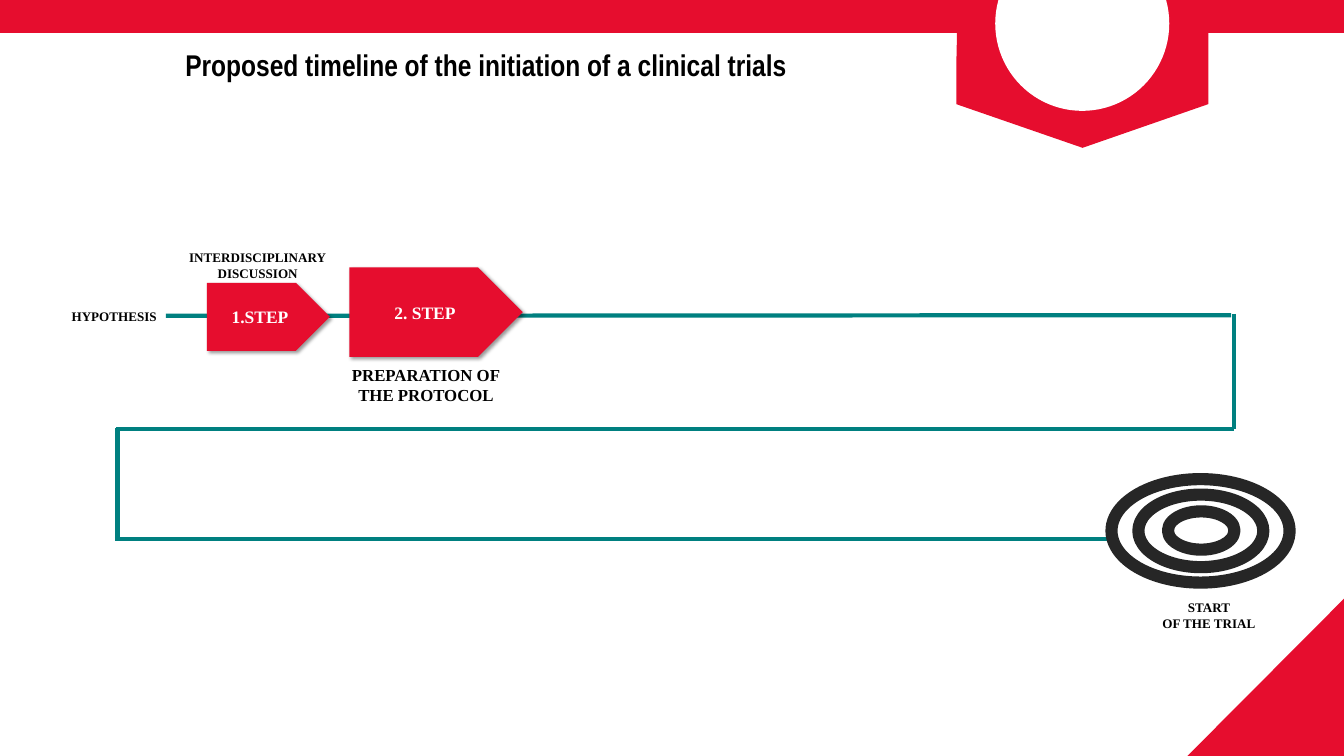
from lxml.etree import SubElement
from pptx import Presentation
from pptx.dml.color import RGBColor
from pptx.enum.shapes import MSO_CONNECTOR, MSO_SHAPE
from pptx.enum.text import MSO_ANCHOR, MSO_AUTO_SIZE, PP_ALIGN
from pptx.oxml.ns import qn
from pptx.util import Emu, Pt

SCALE = 9144
RED = "E60D2E"
TEAL = "008080"
CHARCOAL = "262626"
WHITE = "FFFFFF"
BLACK = "000000"
SERIF = "Times New Roman"

TIMELINE = [
    (1832, 469, 247, 470),
    (171, 802, 1840, 802),
    (173, 638, 1836, 638),
    (1836, 467, 1836, 639),
    (175, 637, 175, 804),
]
STEPS = [
    ("1.STEP", (308, 421, 183, 101)),
    ("2. STEP", (520, 398, 258, 133)),
]
LABELS = [
    (["HYPOTHESIS"], (85, 454, 170, 34), 14),
    (["INTERDISCIPLINARY", "DISCUSSION"], (265, 367, 237, 57), 14),
    (["PREPARATION OF", "THE PROTOCOL"], (489, 538, 290, 71), 18),
    (["START", "OF THE TRIAL"], (1654, 887, 290, 57), 14),
]
TARGET_RINGS = [
    (1654, 713, 265, 154),
    (1694, 736, 186, 108),
    (1738, 761, 99, 57),
]
CORNER = [(2000, 891), (2000, 1125), (1767, 1125)]
BADGE = [(1798, 0), (1798, 155), (1611, 220), (1423, 155),
         (1423, 101), (1424, 56), (1423, 0)]


def px(*lengths):
    return [Emu(length * SCALE) for length in lengths]


def rgb(value):
    return RGBColor.from_string(value)


def write(frame, lines, size, color, font=SERIF):
    frame.word_wrap = True
    frame.text = "\n".join(lines)
    style = {"name": font, "size": Pt(size), "bold": True}
    for paragraph in frame.paragraphs:
        paragraph.alignment = PP_ALIGN.CENTER
        for key, value in style.items():
            setattr(paragraph.font, key, value)
        paragraph.font.color.rgb = rgb(color)


def paint(shape, fill, line=None, width=0):
    shape.shadow.inherit = False
    shape.fill.solid()
    shape.fill.fore_color.rgb = rgb(fill)
    if line:
        shape.line.color.rgb = rgb(line)
        shape.line.width = Pt(width)
    else:
        shape.line.fill.background()


def add_preset(slide, preset, box, fill, line=None, width=0):
    shape = slide.shapes.add_shape(preset, *px(*box))
    paint(shape, fill, line, width)
    return shape


def add_outline(slide, points, fill):
    builder = slide.shapes.build_freeform(*points[0], scale=SCALE)
    builder.add_line_segments(points[1:], close=True)
    paint(builder.convert_to_shape(), fill)


def add_timeline_segment(slide, ends):
    segment = slide.shapes.add_connector(MSO_CONNECTOR.STRAIGHT, *px(*ends))
    segment.line.color.rgb = rgb(TEAL)
    segment.line.width = Pt(4.5)
    SubElement(segment._element.spPr, qn("a:effectLst"))


def add_step(slide, caption, box):
    step = add_preset(slide, MSO_SHAPE.PENTAGON, box, RED)
    write(step.text_frame, [caption], 18.7, WHITE)
    step.text_frame.vertical_anchor = MSO_ANCHOR.MIDDLE
    effects = step._element.spPr.find(qn("a:effectLst"))
    shadow = SubElement(effects, qn("a:outerShdw"), blurRad=str(Pt(4)),
                        dist=str(Pt(3)), dir="2700000", algn="tl", rotWithShape="0")
    tint = SubElement(shadow, qn("a:srgbClr"), val=BLACK)
    SubElement(tint, qn("a:alpha"), val="40000")


def add_label(slide, lines, box, size):
    label = slide.shapes.add_textbox(*px(*box))
    write(label.text_frame, lines, size, BLACK)
    label.text_frame.auto_size = MSO_AUTO_SIZE.SHAPE_TO_FIT_TEXT


def set_title(slide, heading):
    title = slide.shapes.title
    place = zip(("left", "top", "width", "height"), px(23, 40, 1400, 113))
    for key, value in place:
        setattr(title, key, value)
    write(title.text_frame, [heading], 32.1, BLACK, "Arial Narrow")
    title.text_frame.auto_size = MSO_AUTO_SIZE.NONE
    title.text_frame.vertical_anchor = MSO_ANCHOR.MIDDLE


def main():
    presentation = Presentation()
    presentation.slide_width, presentation.slide_height = px(2000, 1125)
    slide = presentation.slides.add_slide(presentation.slide_layouts[5])

    set_title(slide, "Proposed timeline of the initiation of a clinical trials")
    for ends in TIMELINE:
        add_timeline_segment(slide, ends)
    for caption, box in STEPS:
        add_step(slide, caption, box)
    for ring in TARGET_RINGS:
        add_preset(slide, MSO_SHAPE.OVAL, ring, WHITE, CHARCOAL, 13)
    add_preset(slide, MSO_SHAPE.RECTANGLE, (0, 0, 2000, 49), RED)
    add_outline(slide, CORNER, RED)
    add_outline(slide, BADGE, RED)
    add_preset(slide, MSO_SHAPE.OVAL, (1481, -95, 259, 260), WHITE)
    for lines, box, size in LABELS:
        add_label(slide, lines, box, size)

    presentation.save("out.pptx")


if __name__ == "__main__":
    main()
